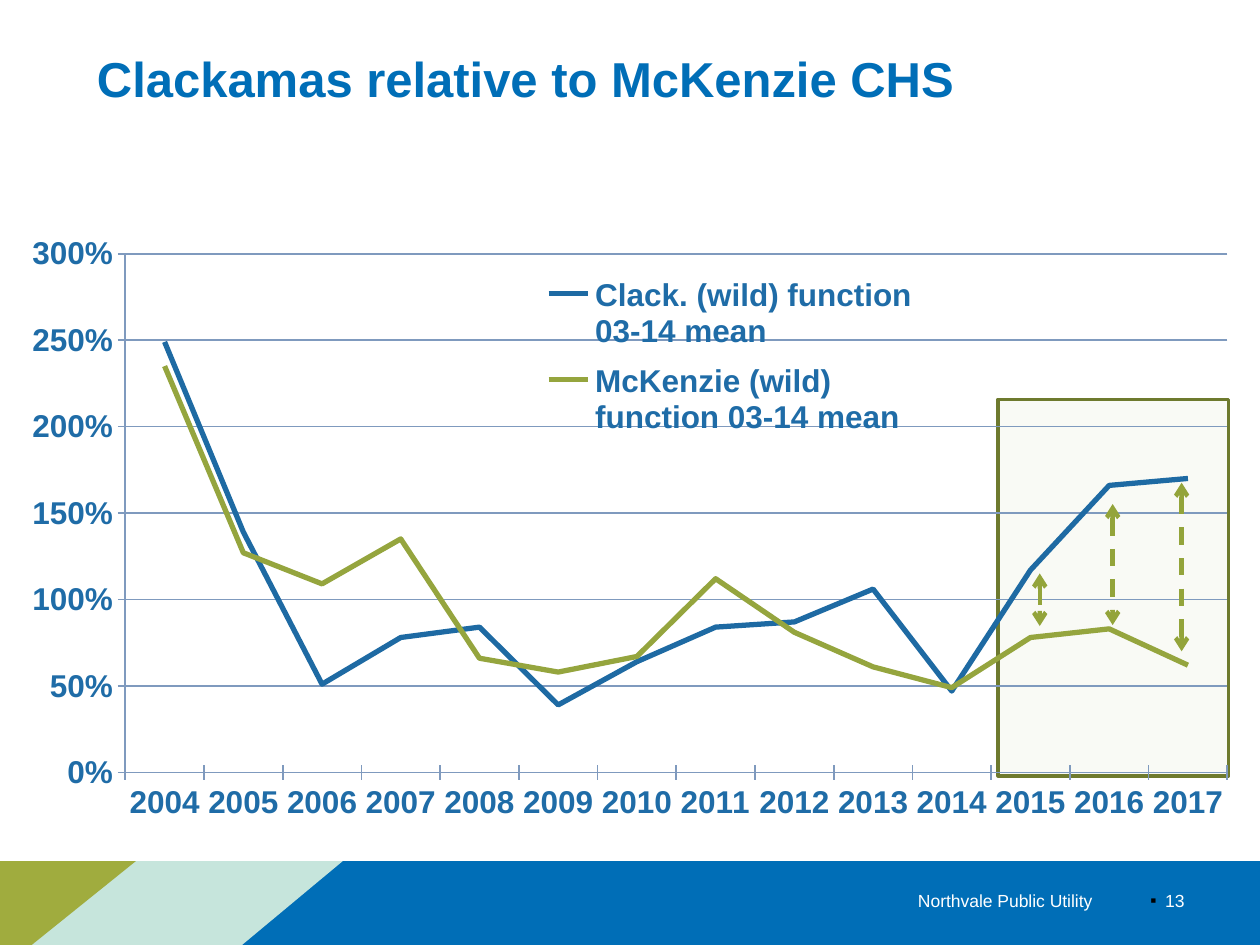
from lxml.etree import SubElement
from pptx import Presentation
from pptx.chart.data import CategoryChartData
from pptx.dml.color import RGBColor
from pptx.enum.chart import XL_CHART_TYPE, XL_LEGEND_POSITION, XL_TICK_MARK
from pptx.enum.dml import MSO_LINE
from pptx.enum.shapes import MSO_CONNECTOR, MSO_SHAPE
from pptx.enum.text import MSO_ANCHOR, MSO_AUTO_SIZE, PP_ALIGN
from pptx.oxml.ns import qn
from pptx.util import Cm, Pt

BRAND_BLUE = RGBColor(0x00, 0x6E, 0xB7)
MINT = RGBColor(0xC6, 0xE5, 0xDC)
OLIVE = RGBColor(0xA0, 0xAC, 0x3E)
WHITE = RGBColor(0xFF, 0xFF, 0xFF)
LABEL_BLUE = RGBColor(0x1F, 0x6C, 0xA7)
CLACKAMAS_BLUE = RGBColor(0x1E, 0x6A, 0xA3)
MCKENZIE_GREEN = RGBColor(0x95, 0xA5, 0x3E)
GAP_GREEN = RGBColor(0x93, 0xA4, 0x3A)
BOX_GREEN = RGBColor(0x6E, 0x7A, 0x2E)
AXIS_BLUE = RGBColor(0x7F, 0x9A, 0xBE)
FONT = "Arial"

TITLE = "Clackamas relative to McKenzie CHS"
COMPANY = "Northvale Public Utility"
PAGE = "13"
YEARS = [str(year) for year in range(2004, 2018)]
RETURNS = [
    ("Clack. (wild) function 03-14 mean", CLACKAMAS_BLUE,
     [2.49, 1.39, 0.51, 0.78, 0.84, 0.39, 0.64, 0.84, 0.87, 1.06, 0.47, 1.17, 1.66, 1.7]),
    ("McKenzie (wild) function 03-14 mean", MCKENZIE_GREEN,
     [2.35, 1.27, 1.09, 1.35, 0.66, 0.58, 0.67, 1.12, 0.81, 0.61, 0.49, 0.78, 0.83, 0.62]),
]
FOOTER_TOP, FOOTER_BOTTOM = 17.36, 19.05
FOOTER_BANDS = [
    (BRAND_BLUE, (0, 25.4), (0, 25.4)),
    (MINT, (1.63, 6.91), (0.48, 4.88)),
    (OLIVE, (0, 2.74), (0, 0.64)),
]
GAPS = {"2015": (20.96, 11.56, 12.62), "2016": (22.43, 10.16, 12.6),
        "2017": (23.82, 9.73, 13.13)}
PLOT_LAYOUT = (0.091, 0.127, 0.909, 0.774)
LEGEND_LAYOUT = (0.43, 0.14, 0.32, 0.28)


def style(paragraph, size, color, align, bold=False):
    paragraph.alignment = align
    font = paragraph.font
    font.name, font.size, font.bold = FONT, Pt(size), bold
    font.color.rgb = color


def add_band(slide, color, top_edge, bottom_edge):
    corners = [(x, FOOTER_TOP) for x in top_edge]
    corners += [(x, FOOTER_BOTTOM) for x in reversed(bottom_edge)]
    start, *rest = [(Cm(x), Cm(y)) for x, y in corners]
    builder = slide.shapes.build_freeform(*start)
    builder.add_line_segments(rest)
    band = builder.convert_to_shape()
    band.shadow.inherit = False
    band.fill.solid()
    band.fill.fore_color.rgb = color
    band.line.fill.background()


def add_footer(slide, text, left, width):
    footer = slide.shapes.add_textbox(Cm(left), Cm(17.65), Cm(width), Cm(1.02))
    frame = footer.text_frame
    frame.word_wrap = True
    frame.vertical_anchor = MSO_ANCHOR.MIDDLE
    frame.text = text
    style(frame.paragraphs[0], 10, WHITE, PP_ALIGN.RIGHT)
    return frame.paragraphs[0]


def add_square_bullet(paragraph):
    props = paragraph._p.get_or_add_pPr()
    props.set("marL", str(Cm(0.3)))
    props.set("indent", str(-Cm(0.3)))
    bullet_color = SubElement(props, qn("a:buClr"))
    SubElement(bullet_color, qn("a:srgbClr"), val="000000")
    SubElement(props, qn("a:buFont"), typeface=FONT)
    SubElement(props, qn("a:buChar"), char="▪")
    props.append(props.find(qn("a:defRPr")))


def add_gap_arrow(slide, x, top, bottom):
    arrow = slide.shapes.add_connector(
        MSO_CONNECTOR.STRAIGHT, Cm(x), Cm(top), Cm(x), Cm(bottom))
    arrow.line.color.rgb = GAP_GREEN
    arrow.line.width = Pt(2.5)
    arrow.line.dash_style = MSO_LINE.DASH
    for end in ("a:headEnd", "a:tailEnd"):
        SubElement(arrow.line._get_or_add_ln(), qn(end), type="arrow")
    SubElement(arrow._element.spPr, qn("a:effectLst"))


def add_recent_box(slide):
    box = slide.shapes.add_shape(
        MSO_SHAPE.RECTANGLE, Cm(20.12), Cm(8.05), Cm(4.65), Cm(7.59))
    box.shadow.inherit = False
    box.fill.solid()
    box.fill.fore_color.rgb = MCKENZIE_GREEN
    tint = box._element.spPr.find(qn("a:solidFill"))[0]
    SubElement(tint, qn("a:alpha"), val="5000")
    box.line.color.rgb = BOX_GREEN
    box.line.width = Pt(2)


def set_layout(element, bounds, inner=False):
    layout = element.find(qn("c:layout"))
    if layout is None:
        layout = SubElement(element, qn("c:layout"))
    for child in list(layout):
        layout.remove(child)
    manual = SubElement(layout, qn("c:manualLayout"))
    if inner:
        SubElement(manual, qn("c:layoutTarget"), val="inner")
    for tag in ("xMode", "yMode"):
        SubElement(manual, qn(f"c:{tag}"), val="edge")
    for tag, value in zip("xywh", bounds):
        SubElement(manual, qn(f"c:{tag}"), val=str(value))
    return layout


def add_return_chart(slide):
    data = CategoryChartData(number_format="0%")
    data.categories = YEARS
    for name, _, values in RETURNS:
        data.add_series(name, values)
    chart = slide.shapes.add_chart(
        XL_CHART_TYPE.LINE, Cm(0.3), Cm(3.4), Cm(24.46), Cm(13.51), data).chart
    chart.has_title = False
    chart.font.name, chart.font.size, chart.font.bold = FONT, Pt(18), True
    chart.font.color.rgb = LABEL_BLUE
    chart.plots[0].vary_by_categories = False
    for series, (_, color, _) in zip(chart.plots[0].series, RETURNS):
        series.smooth = False
        series.format.line.color.rgb = color
        series.format.line.width = Pt(3)

    years, percent = chart.category_axis, chart.value_axis
    years.major_tick_mark = XL_TICK_MARK.CROSS
    percent.major_tick_mark = XL_TICK_MARK.OUTSIDE
    percent.minimum_scale, percent.maximum_scale, percent.major_unit = 0, 3, 0.5
    percent.has_major_gridlines = True
    percent.tick_labels.number_format = "0%"
    percent.tick_labels.number_format_is_linked = False
    for part in (years, percent, percent.major_gridlines):
        part.format.line.color.rgb = AXIS_BLUE
        part.format.line.width = Pt(1)

    chart.has_legend = True
    legend = chart.legend
    legend.position = XL_LEGEND_POSITION.RIGHT
    legend.include_in_layout = False
    legend_layout = set_layout(legend._element, LEGEND_LAYOUT)
    legend._element.find(qn("c:legendPos")).addnext(legend_layout)
    plot_area = chart._chartSpace.chart.plotArea
    plot_area.insert(0, set_layout(plot_area, PLOT_LAYOUT, inner=True))


def main():
    deck = Presentation()
    deck.slide_width, deck.slide_height = Cm(25.4), Cm(19.05)
    slide = deck.slides.add_slide(deck.slide_layouts[5])

    for band in FOOTER_BANDS:
        add_band(slide, *band)
    add_footer(slide, COMPANY, 17.32, 4.95)
    add_square_bullet(add_footer(slide, PAGE, 22.91, 1.22))

    title = slide.shapes.title
    title.left, title.top, title.width, title.height = Cm(1.7), Cm(0.05), Cm(25.4), Cm(3.18)
    title.text_frame.text = TITLE
    title.text_frame.auto_size = MSO_AUTO_SIZE.NONE
    title.text_frame.vertical_anchor = MSO_ANCHOR.MIDDLE
    heading = title.text_frame.paragraphs[0]
    heading.line_spacing = 0.9
    style(heading, 28, BRAND_BLUE, PP_ALIGN.LEFT, bold=True)

    add_recent_box(slide)
    add_return_chart(slide)
    for gap in GAPS.values():
        add_gap_arrow(slide, *gap)
    deck.save("out.pptx")


if __name__ == "__main__":
    main()
